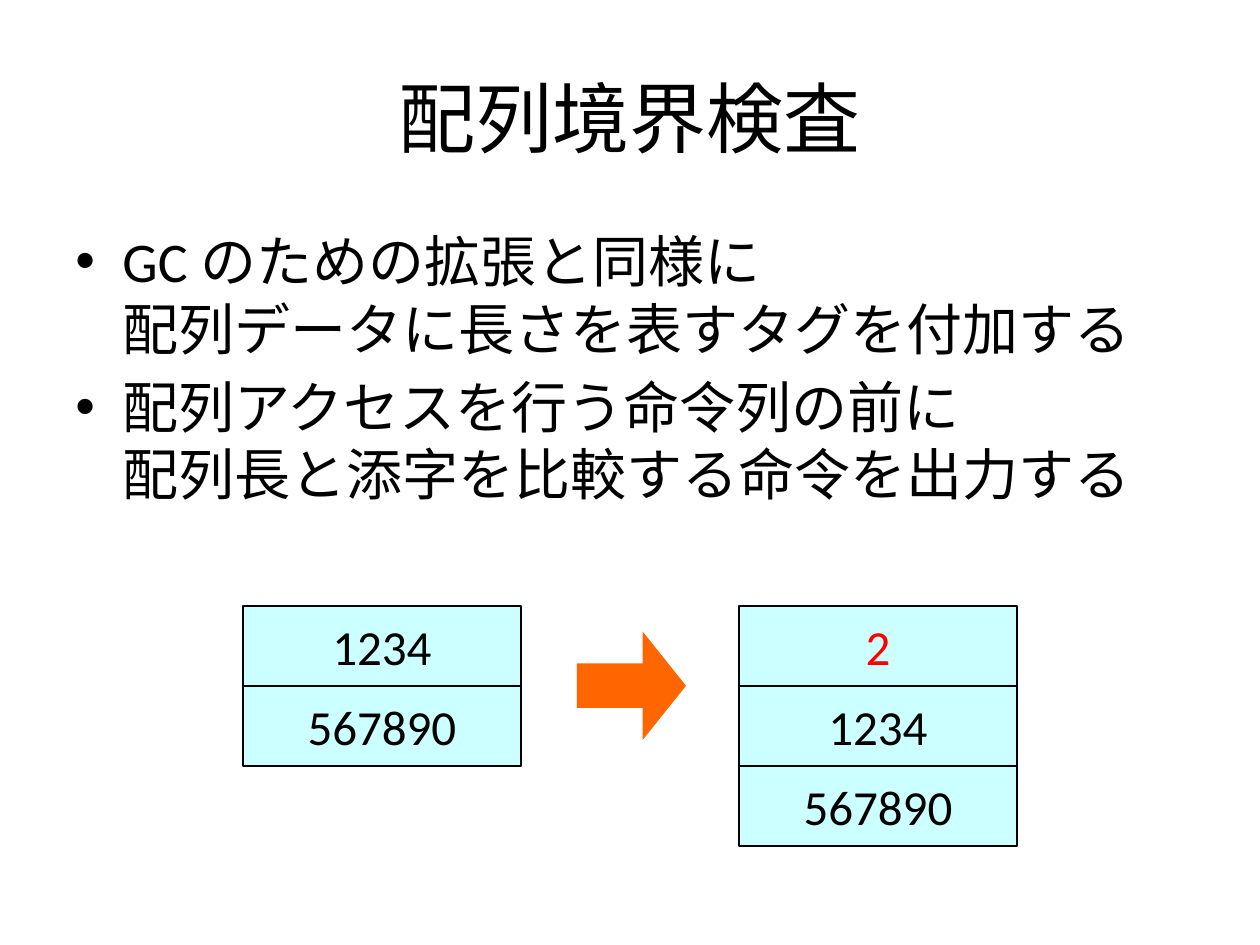
from lxml.etree import SubElement
from pptx import Presentation
from pptx.dml.color import RGBColor
from pptx.enum.shapes import MSO_SHAPE as Preset
from pptx.enum.text import MSO_ANCHOR as Anchor, PP_ALIGN as Align
from pptx.oxml.ns import qn
from pptx.util import Cm, Pt

BLACK = RGBColor(0x00, 0x00, 0x00)
RED = RGBColor(0xFF, 0x00, 0x00)
ORANGE = RGBColor(0xFF, 0x66, 0x00)
PALE_CYAN = RGBColor(0xCC, 0xFF, 0xFF)

FONT = "Calibri"
TITLE = "配列境界検査"
POINTS = [
    "GC のための拡張と同様に\v配列データに長さを表すタグを付加する",
    "配列アクセスを行う命令列の前に \v配列長と添字を比較する命令を出力する",
]
ARRAY_DATA = [("1234", BLACK), ("567890", BLACK)]
LENGTH_TAG = ("2", RED)

CELL_WIDTH, CELL_HEIGHT = Cm(5.6), Cm(1.61)
MEMORY_TOP = Cm(12.22)


def set_all(target, values):
    for name, value in values.items():
        setattr(target, name, value)


def place(element, left, top, width, height):
    set_all(element, {"left": Cm(left), "top": Cm(top),
                      "width": Cm(width), "height": Cm(height)})


def write(paragraph, text, size, color, align):
    paragraph.text = text
    paragraph.alignment = align
    set_all(paragraph.font, {"name": FONT, "size": Pt(size)})
    paragraph.font.color.rgb = color
    for run in paragraph.runs:
        set_all(run.font, {"name": FONT, "size": Pt(size)})
        run.font.color.rgb = color


def add_title(slide):
    title = slide.shapes.title
    place(title, 1.27, 0.76, 22.86, 3.18)
    title.text_frame.vertical_anchor = Anchor.MIDDLE
    write(title.text_frame.paragraphs[0], TITLE, 44, BLACK, Align.CENTER)


def add_bullet(paragraph):
    properties = paragraph._p.get_or_add_pPr()
    properties.set("marL", str(Cm(0.95)))
    properties.set("indent", str(-Cm(0.95)))
    SubElement(properties, qn("a:buFont"), typeface="Arial")
    SubElement(properties, qn("a:buChar"), char="•")


def add_points(slide):
    frame = slide.shapes.add_textbox(
        Cm(1.27), Cm(4.45), Cm(22.86), Cm(12.57)).text_frame
    frame.word_wrap = True
    for index, point in enumerate(POINTS):
        paragraph = frame.add_paragraph() if index else frame.paragraphs[0]
        write(paragraph, point, 32, BLACK, Align.LEFT)
        paragraph.space_before = Pt(6.4)
        add_bullet(paragraph)


def add_filled(slide, preset, bounds, color):
    shape = slide.shapes.add_shape(preset, *bounds)
    shape.shadow.inherit = False
    shape.fill.solid()
    shape.fill.fore_color.rgb = color
    return shape


def add_memory(slide, left, words):
    for row, (word, color) in enumerate(words):
        bounds = left, MEMORY_TOP + row * CELL_HEIGHT, CELL_WIDTH, CELL_HEIGHT
        cell = add_filled(slide, Preset.RECTANGLE, bounds, PALE_CYAN)
        cell.line.color.rgb = BLACK
        cell.line.width = Pt(1)
        set_all(cell.text_frame, {"word_wrap": False,
                                  "vertical_anchor": Anchor.MIDDLE})
        write(cell.text_frame.paragraphs[0], word, 28, color, Align.CENTER)


def add_arrow(slide):
    bounds = Cm(11.63), Cm(12.73), Cm(2.2), Cm(2.19)
    arrow = add_filled(slide, Preset.RIGHT_ARROW, bounds, ORANGE)
    arrow.line.fill.background()
    arrow.adjustments[0] = 0.41
    arrow.adjustments[1] = 0.4


def main():
    deck = Presentation()
    set_all(deck, {"slide_width": Cm(25.4), "slide_height": Cm(19.05)})
    slide = deck.slides.add_slide(deck.slide_layouts[5])
    add_title(slide)
    add_points(slide)
    add_memory(slide, Cm(4.9), ARRAY_DATA)
    add_arrow(slide)
    add_memory(slide, Cm(14.9), [LENGTH_TAG] + ARRAY_DATA)
    deck.save("out.pptx")


if __name__ == "__main__":
    main()
